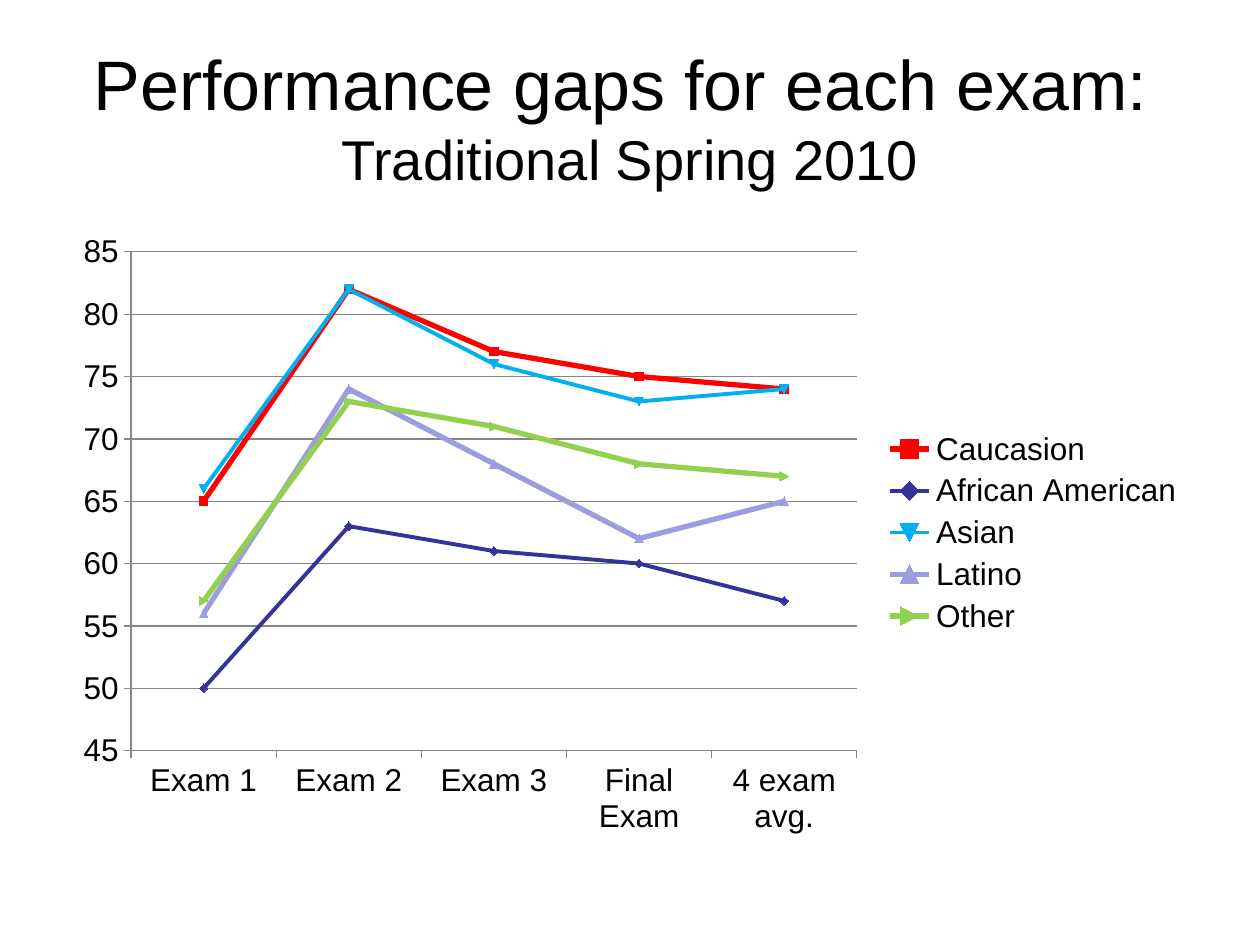
from dataclasses import dataclass

from lxml import etree
from pptx import Presentation
from pptx import util as u
from pptx.chart import data as chart_data
from pptx.dml.color import RGBColor
from pptx.enum import chart as charts
from pptx.enum import text
from pptx.oxml import ns

FONT = "Arial"
BLACK = "000000"
GREY = "868686"
EXAMS = ["Exam 1", "Exam 2", "Exam 3", "Final Exam", "4 exam avg."]


@dataclass(frozen=True)
class Group:
    name: str
    scores: tuple[int, ...]
    color: str
    width: float


GROUPS = [
    Group("Caucasion", (65, 82, 77, 75, 74), "FF0000", 3),
    Group("African American", (50, 63, 61, 60, 57), "333399", 2.25),
    Group("Asian", (66, 82, 76, 73, 74), "00B0F0", 2.25),
    Group("Latino ", (56, 74, 68, 62, 65), "9C9CDF", 3),
    Group("Other", (57, 73, 71, 68, 67), "92D050", 3),
]


def rgb(value: str) -> RGBColor:
    return RGBColor.from_string(value)


def format_font(font, *, size: float, color: str = BLACK) -> None:
    font.name = FONT
    font.size = u.Pt(size)
    font.color.rgb = rgb(color)


def add_span(para, wording: str, *, size: float, color: str = BLACK) -> None:
    span = para.add_run()
    span.text = wording
    format_font(span.font, size=size, color=color)


def format_line(line, *, color: str, width: float) -> None:
    line.color.rgb = rgb(color)
    line.width = u.Pt(width)


def place_plot(chart, *, x: float, y: float, w: float, h: float) -> None:
    plot_area = chart._chartSpace.chart.plotArea
    for old in plot_area.findall(ns.qn("c:layout")):
        plot_area.remove(old)
    layout = etree.Element(ns.qn("c:layout"))
    manual = etree.SubElement(layout, ns.qn("c:manualLayout"))
    settings = {"layoutTarget": "inner", "xMode": "edge", "yMode": "edge",
                "x": x, "y": y, "w": w, "h": h}
    for tag, value in settings.items():
        etree.SubElement(manual, ns.qn(f"c:{tag}")).set("val", str(value))
    plot_area.insert(0, layout)


def style_series(series, group: Group) -> None:
    series.smooth = False
    format_line(series.format.line, color=group.color, width=group.width)
    marker = series.marker
    marker.style = charts.XL_MARKER_STYLE.AUTOMATIC
    marker.size = 5
    marker.format.fill.solid()
    marker.format.fill.fore_color.rgb = rgb(group.color)
    format_line(marker.format.line, color=group.color, width=0.75)


def add_title(page) -> None:
    box = page.shapes.title
    box.left, box.top = u.Cm(1.27), u.Cm(0.76)
    box.width, box.height = u.Cm(22.86), u.Cm(3.18)
    box.text_frame.vertical_anchor = text.MSO_ANCHOR.MIDDLE
    para = box.text_frame.paragraphs[0]
    para.alignment = text.PP_ALIGN.CENTER
    add_span(para, "Performance gaps for each exam: ", size=40)
    para.add_line_break()
    add_span(para, "Traditional Spring 2010", size=32)


def add_score_chart(page) -> None:
    scores = chart_data.CategoryChartData()
    scores.categories = EXAMS
    for group in GROUPS:
        scores.add_series(group.name, group.scores)
    chart = page.shapes.add_chart(
        charts.XL_CHART_TYPE.LINE_MARKERS,
        u.Cm(1.27), u.Cm(4.45), u.Cm(22.86), u.Cm(12.57), scores,
    ).chart
    format_font(chart.font, size=18)
    chart.has_title = False
    chart.has_legend = True
    chart.legend.position = charts.XL_LEGEND_POSITION.RIGHT
    chart.legend.include_in_layout = False
    chart.plots[0].vary_by_categories = False
    place_plot(chart, x=0.06, y=0.05, w=0.64, h=0.8)

    value_axis = chart.value_axis
    value_axis.minimum_scale, value_axis.maximum_scale = 45, 85
    value_axis.major_unit = 5
    value_axis.has_major_gridlines = True
    format_line(value_axis.major_gridlines.format.line, color=GREY, width=0.75)
    for axis in (value_axis, chart.category_axis):
        axis.major_tick_mark = charts.XL_TICK_MARK.OUTSIDE
        format_line(axis.format.line, color=GREY, width=0.75)
    for series, group in zip(chart.plots[0].series, GROUPS):
        style_series(series, group)


def main() -> None:
    deck = Presentation()
    deck.slide_width, deck.slide_height = u.Cm(25.4), u.Cm(19.05)
    page = deck.slides.add_slide(deck.slide_layouts[5])
    add_title(page)
    add_score_chart(page)
    deck.save("out.pptx")


if __name__ == "__main__":
    main()
